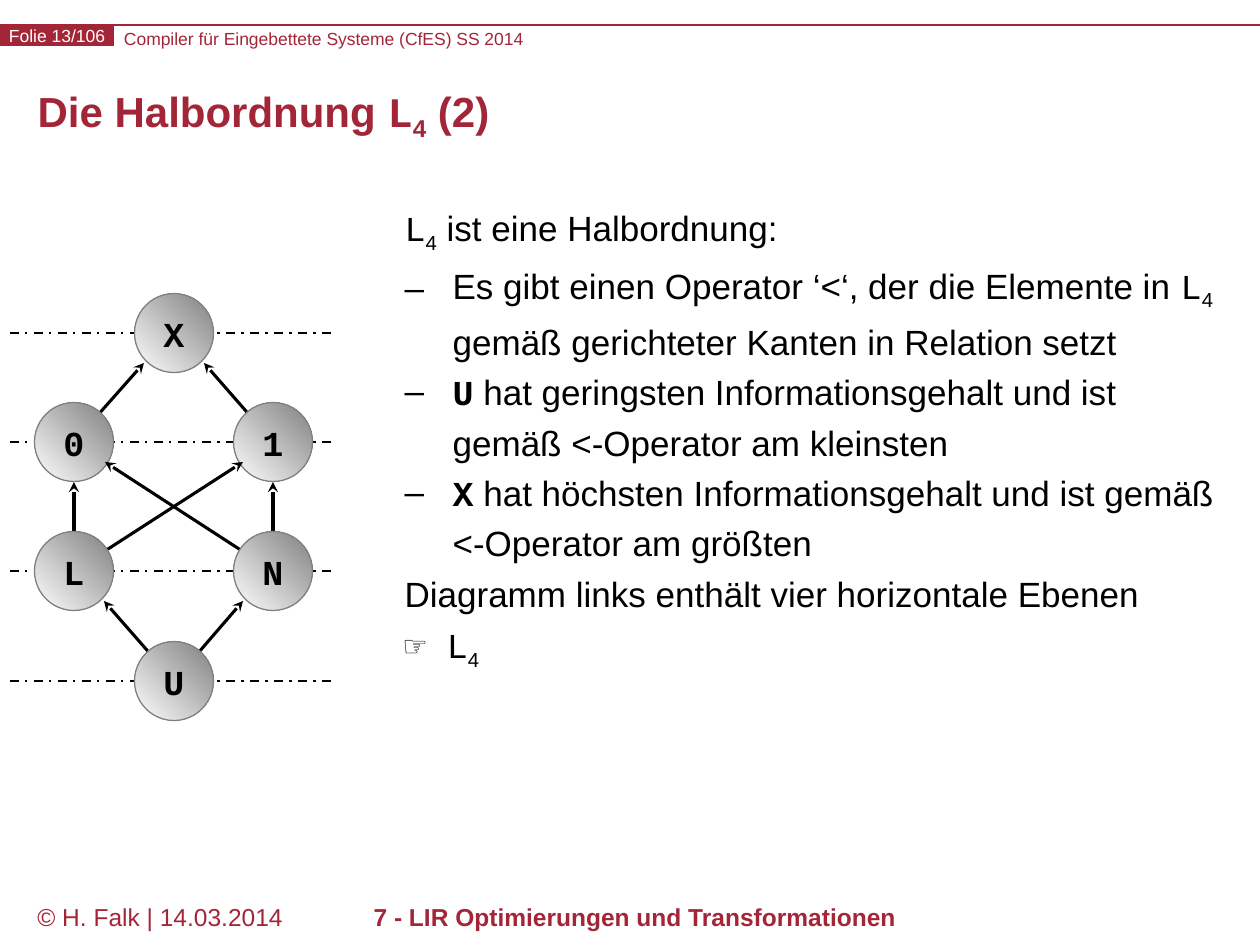
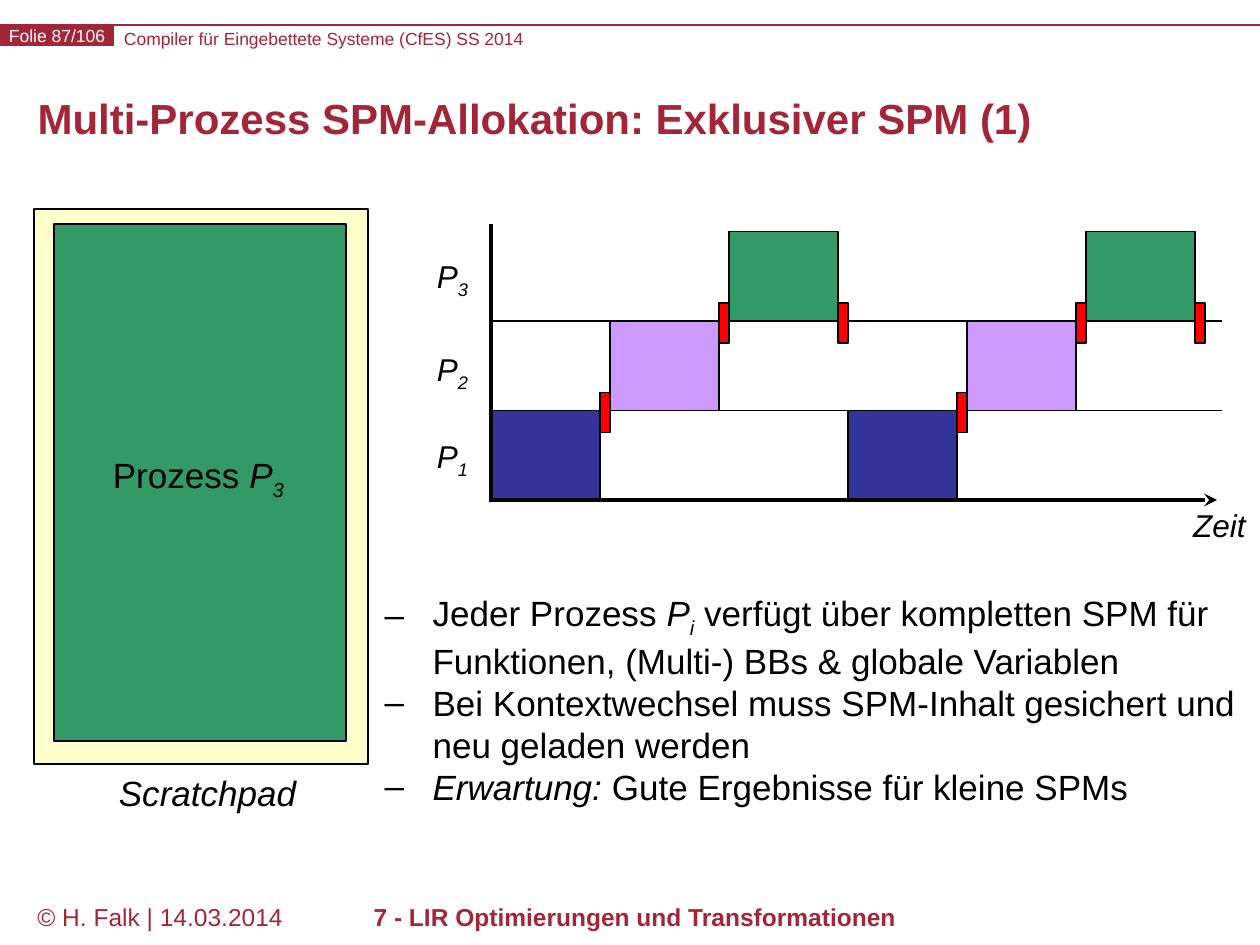
from lxml import etree
from pptx import Presentation
from pptx.dml.color import RGBColor
from pptx.enum.dml import MSO_LINE
from pptx.enum.shapes import MSO_CONNECTOR, MSO_SHAPE
from pptx.enum.text import MSO_ANCHOR, MSO_AUTO_SIZE, PP_ALIGN
from pptx.oxml.ns import qn
from pptx.util import Emu, Pt

STRAIGHT = MSO_CONNECTOR.STRAIGHT
RECTANGLE, OVAL = MSO_SHAPE.RECTANGLE, MSO_SHAPE.OVAL
DASH_DOT = MSO_LINE.DASH_DOT
TOP, MIDDLE = MSO_ANCHOR.TOP, MSO_ANCHOR.MIDDLE
LEFT, CENTER = PP_ALIGN.LEFT, PP_ALIGN.CENTER
NO_AUTOFIT = MSO_AUTO_SIZE.NONE

PX_PER_INCH = 126
SANS, MONO = "Arial", "Courier New"
CRIMSON, WHITE, BLACK, GRAY = "A32638", "FFFFFF", "000000", "808080"
CREAM, RED = "FFFFCC", "FF0000"
PROCESS_COLORS = ["333399", "CC99FF", "339966"]  # P1, P2, P3


def px(length):
    return Emu(round(length * 914400 / PX_PER_INCH))


def rgb(color):
    return RGBColor.from_string(color)


# ---- Text ----
def write_paragraph(paragraph, runs, size, color=BLACK, bold=False, align=LEFT):
    """Runs are (text, style) pairs; style letters: m mono, b bold, i italic, s subscript."""
    paragraph.alignment = align
    font = paragraph.font
    font.name, font.size, font.bold = SANS, Pt(size), bold
    font.color.rgb = rgb(color)
    for text, style in runs:
        run = paragraph.add_run()
        run.text = text
        if "m" in style:
            run.font.name = MONO
        if "b" in style:
            run.font.bold = True
        if "i" in style:
            run.font.italic = True
        if "s" in style:
            run._r.get_or_add_rPr().set("baseline", "-25000")


def set_frame(frame, anchor=TOP, inset=None, wrap=True):
    frame.word_wrap = wrap
    frame.auto_size = NO_AUTOFIT
    frame.vertical_anchor = anchor
    if inset is not None:
        frame.margin_left = frame.margin_right = px(inset)
        frame.margin_top = frame.margin_bottom = px(inset)


def add_text(slide, box, runs, size, color=BLACK, bold=False, align=LEFT, inset=None):
    frame = slide.shapes.add_textbox(*map(px, box)).text_frame
    set_frame(frame, inset=inset)
    write_paragraph(frame.paragraphs[0], runs, size, color, bold, align)


def place(shape, box):
    shape.left, shape.top, shape.width, shape.height = map(px, box)


def set_bullet(paragraph, character):
    properties = paragraph._p.get_or_add_pPr()
    indent = px(48) if character else 0
    properties.set("marL", str(indent))
    properties.set("indent", str(-indent))
    if character:
        etree.SubElement(properties, qn("a:buFont")).set("typeface", SANS)
        etree.SubElement(properties, qn("a:buChar")).set("char", character)
    else:
        etree.SubElement(properties, qn("a:buNone"))


def fill_body(slide, box, items, spacing):
    """Items are (bullet, runs) pairs."""
    body = slide.placeholders[1]
    place(body, box)
    frame = body.text_frame
    set_frame(frame)
    for index, (bullet, runs) in enumerate(items):
        paragraph = frame.add_paragraph() if index else frame.paragraphs[0]
        paragraph.line_spacing = spacing
        paragraph.space_before = Pt(0)
        set_bullet(paragraph, bullet)
        write_paragraph(paragraph, runs, 20)


# ---- Shapes and lines ----
def add_block(slide, kind, box, fill=None, line=None, width=0.75):
    shape = slide.shapes.add_shape(kind, *map(px, box))
    shape.shadow.inherit = False
    if fill:
        shape.fill.solid()
        shape.fill.fore_color.rgb = rgb(fill)
    if line:
        shape.line.color.rgb = rgb(line)
        shape.line.width = Pt(width)
    else:
        shape.line.fill.background()
    return shape


def add_line(slide, start, end, width, color=BLACK, dash=None, arrow=False):
    connector = slide.shapes.add_connector(STRAIGHT, *map(px, (*start, *end)))
    connector.line.color.rgb = rgb(color)
    connector.line.width = Pt(width)
    if dash:
        connector.line.dash_style = dash
    if arrow:
        etree.SubElement(connector.line._get_or_add_ln(), qn("a:tailEnd")).set("type", "stealth")
    etree.SubElement(connector._element.spPr, qn("a:effectLst"))


# ---- Shared slide frame ----
def add_slide(presentation, number, title_runs):
    slide = presentation.slides.add_slide(presentation.slide_layouts[1])
    # Header band
    add_line(slide, (0, 25), (1260, 25), 0.75, CRIMSON)
    add_text(slide, (124, 28, 832, 21), [("Compiler für Eingebettete Systeme (CfES) SS 2014", "")],
             10, CRIMSON, inset=0)
    tag = add_block(slide, RECTANGLE, (0, 25, 114, 21), CRIMSON)
    set_frame(tag.text_frame, MIDDLE, 0, wrap=False)
    write_paragraph(tag.text_frame.paragraphs[0], [(f"Folie {number}/106", "")], 10, WHITE,
                    align=CENTER)
    # Footer
    add_text(slide, (25, 896, 277, 63), [("© H. Falk | 14.03.2014", "")], 14, CRIMSON)
    add_text(slide, (253, 896, 764, 63), [("7 - LIR Optimierungen und Transformationen", "")],
             14, CRIMSON, bold=True, align=CENTER)
    # Title
    title = slide.shapes.title
    place(title, (25, 76, 1211, 91))
    set_frame(title.text_frame, MIDDLE)
    paragraph = title.text_frame.paragraphs[0]
    paragraph.line_spacing = Pt(24)
    write_paragraph(paragraph, title_runs, 24, CRIMSON, bold=True)
    return slide


# ---- Lattice diagram ----
def add_node(slide, label, center, diameter=79):
    x, y = center
    node = add_block(slide, OVAL, (x - diameter / 2, y - diameter / 2, diameter, diameter),
                     line=GRAY)
    node.fill.gradient()
    node.fill.gradient_angle = 45
    for stop, color in zip(node.fill.gradient_stops, (WHITE, GRAY)):
        stop.color.rgb = rgb(color)
    set_frame(node.text_frame, MIDDLE, 0, wrap=False)
    write_paragraph(node.text_frame.paragraphs[0], [(label, "mb")], 20, align=CENTER)


def add_lattice(slide, left, top, width):
    columns = [left + x for x in (64, 164, 263)]
    levels = [top + y for y in (40, 149, 278, 388)]
    positions = {"X": (1, 0), "0": (0, 1), "1": (2, 1), "L": (0, 2), "N": (2, 2), "U": (1, 3)}
    centers = {label: (columns[column], levels[level])
               for label, (column, level) in positions.items()}

    def add_edges(edges):
        for source, target, dx, dy in edges:
            x, y = centers[target]
            add_line(slide, centers[source], (x + dx, y + dy), 1.75, arrow=True)

    for y in levels:
        add_line(slide, (left, y), (left + width, y), 1.25, dash=DASH_DOT)
    # Each edge ends at an offset from the centre of its target
    add_edges([("0", "X", -30, 30), ("1", "X", 30, 30), ("U", "N", -30, 30),
               ("U", "L", 30, 30), ("L", "0", 0, 40), ("N", "1", 0, 40)])
    for label in "UX01":
        add_node(slide, label, centers[label])
    add_edges([("N", "0", 31, 20), ("L", "1", -30, 20)])
    for label in "LN":
        add_node(slide, label, centers[label])


def build_lattice_slide(presentation):
    slide = add_slide(presentation, 13, [("Die Halbordnung ", ""), ("L", "m"), ("4", "s"),
                                         (" (2)", "")])
    lattice_name = [("L", "m"), ("4", "s")]
    fill_body(slide, (392, 191, 843, 688), [
        ("", [*lattice_name, (" ist eine Halbordnung:", "")]),
        ("–", [("Es gibt einen Operator ‘<‘, der die Elemente in ", ""), *lattice_name,
               (" ", "s"), ("gemäß gerichteter Kanten in Relation setzt", "")]),
        ("–", [("U", "mb"),
               (" hat geringsten Informationsgehalt und ist gemäß <-Operator am kleinsten", "")]),
        ("–", [("X", "mb"),
               (" hat höchsten Informationsgehalt und ist gemäß <-Operator am größten", "")]),
        ("", [("Diagramm links enthält vier horizontale Ebenen", "")]),
        ("", [("☞ ", "m"), *lattice_name]),
    ], 1.2)
    add_lattice(slide, 10, 293, 323)


# ---- Scratchpad and schedule ----
def add_scratchpad(slide, left, top, width, height):
    add_block(slide, RECTANGLE, (left, top, width, height), CREAM, BLACK, 1)
    add_block(slide, RECTANGLE, (left + 20, top + 15, width - 42, 517), PROCESS_COLORS[2],
              BLACK, 1)
    add_text(slide, (left + 50, top + 238, 229, 54),
             [("Prozess ", ""), ("P", "i"), ("3", "is")], 20, align=CENTER)
    add_text(slide, (left + 58, top + height + 1, 231, 54), [("Scratchpad", "i")], 20,
             align=CENTER)


def add_schedule(slide, left, top, width, height):
    row_height, block_width, switch_width = 89.5, 109, 10
    bottom = top + height
    row_tops = [bottom - row_height * (row + 1) for row in range(3)]
    # Row lines and labels
    for y in row_tops[:2]:
        add_line(slide, (left, y), (left + width, y), 1)
    for row, y in enumerate((431, 344, 251)):
        add_text(slide, (left - 79, top + y - 224, 81, 50), [("P", "i"), (str(row + 1), "is")],
                 18, align=CENTER)
    # Time slots, each followed by a context switch
    for slot in range(6):
        process = slot % 3
        x = left + slot * (block_width + switch_width)
        add_block(slide, RECTANGLE, (x, row_tops[process], block_width, row_height),
                  PROCESS_COLORS[process], BLACK)
        add_block(slide, RECTANGLE,
                  (x + block_width, row_tops[min(process, 1)] - 18, switch_width, 40),
                  RED, BLACK)
    # Axes
    add_line(slide, (left, top), (left, bottom + 2), 2.5)
    add_line(slide, (left, bottom), (left + width - 5, bottom), 2.5, arrow=True)
    add_text(slide, (left + 688, bottom, 81, 50), [("Zeit", "i")], 18, align=CENTER)


def build_scratchpad_slide(presentation):
    slide = add_slide(presentation, 87,
                      [("Multi-Prozess SPM-Allokation: Exklusiver SPM (1)", "")])
    fill_body(slide, (372, 585, 878, 224), [
        ("–", [("Jeder Prozess ", ""), ("P", "i"), ("i", "is"),
               (" verfügt über kompletten SPM für Funktionen, (Multi-) BBs & globale Variablen",
                "")]),
        ("–", [("Bei Kontextwechsel muss SPM-Inhalt gesichert und neu geladen werden", "")]),
        ("–", [("Erwartung:", "i"), (" Gute Ergebnisse für kleine SPMs", "")]),
    ], 1.0)
    add_scratchpad(slide, 34, 209, 334, 555)
    add_schedule(slide, 491, 224, 731, 276)


def main():
    presentation = Presentation()
    presentation.slide_width, presentation.slide_height = px(1260), px(945)
    build_lattice_slide(presentation)
    build_scratchpad_slide(presentation)
    presentation.save("out.pptx")


if __name__ == "__main__":
    main()
